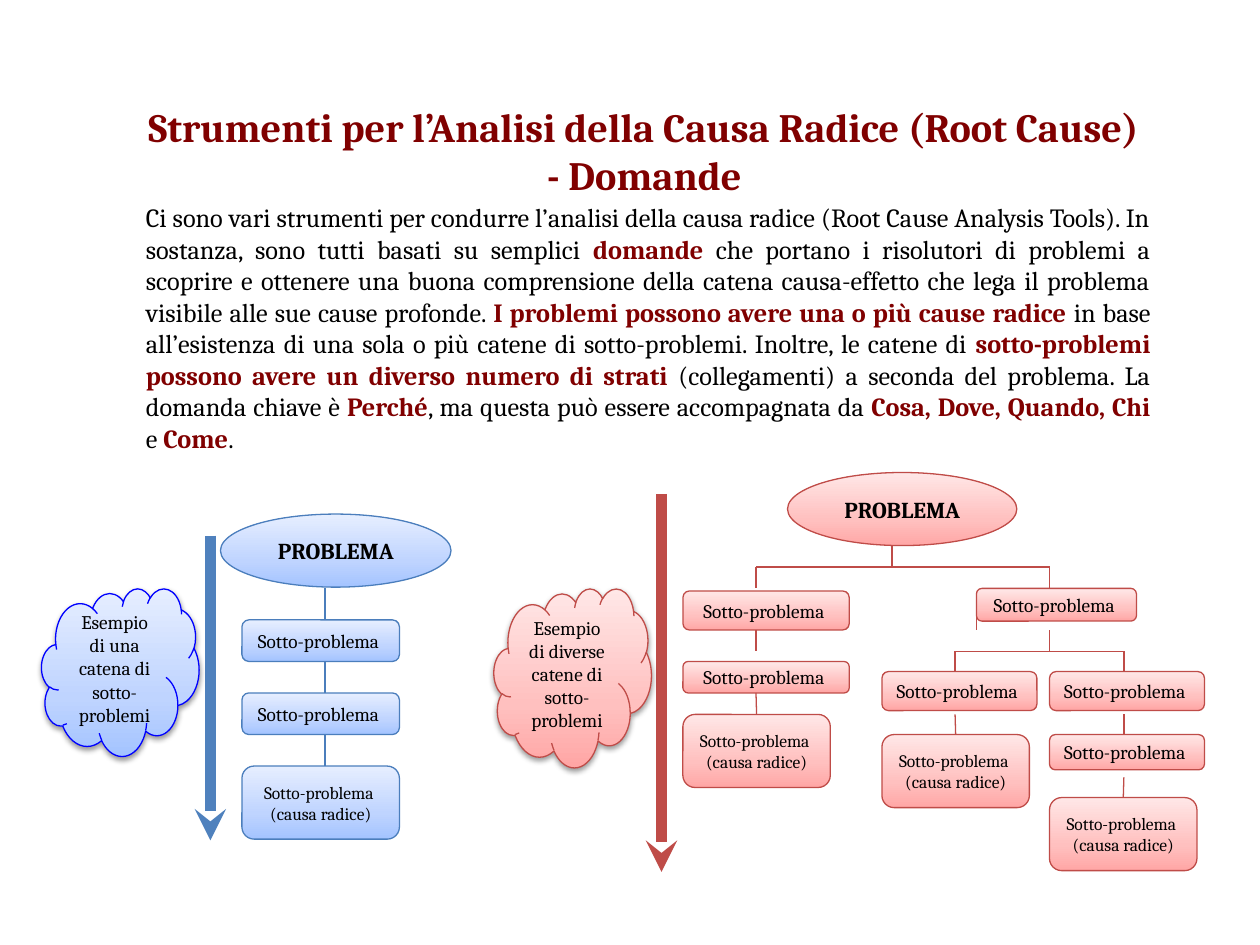
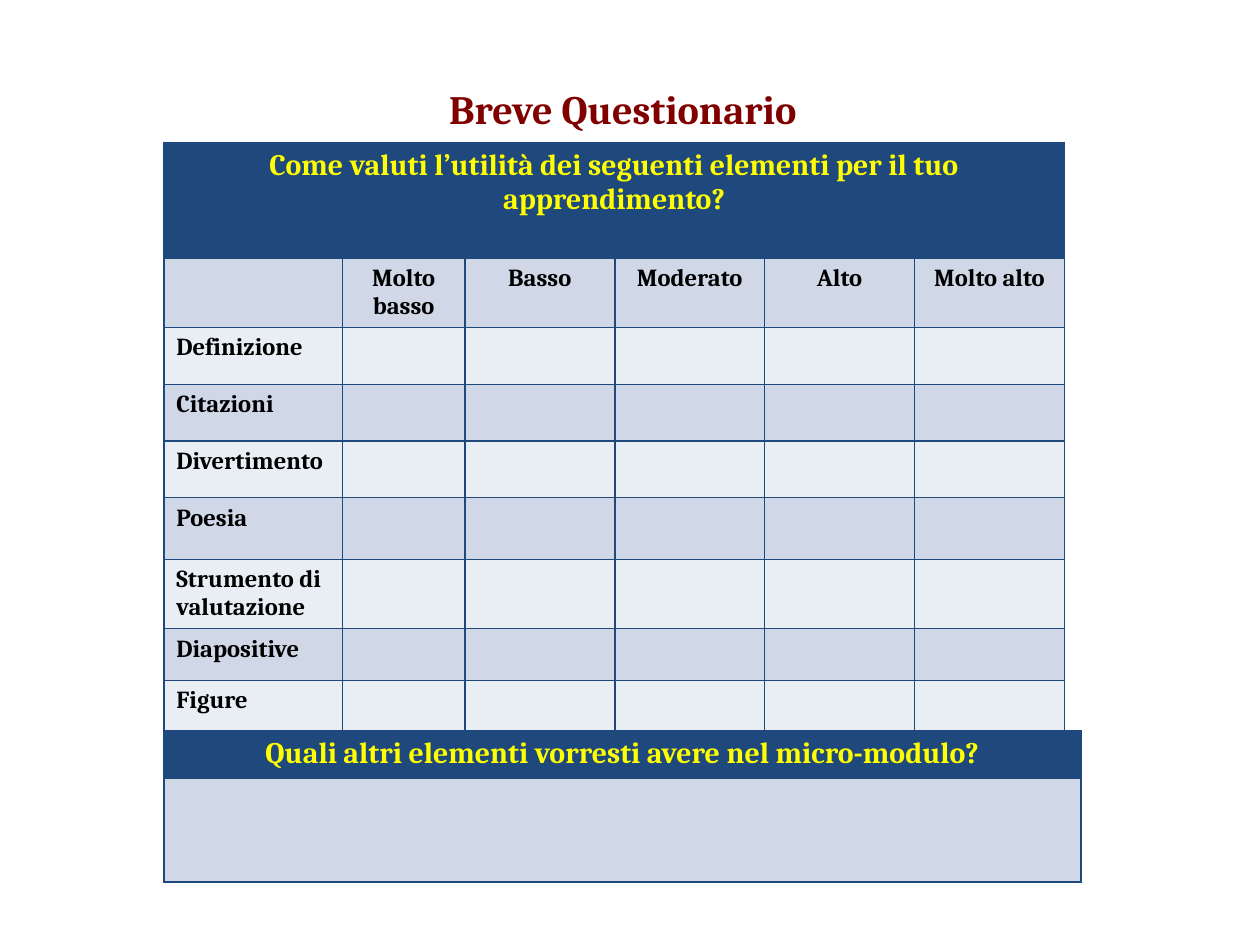
from lxml.etree import SubElement
from pptx import Presentation
from pptx.dml.color import RGBColor
from pptx.enum.shapes import MSO_CONNECTOR, MSO_SHAPE
from pptx.enum.text import MSO_ANCHOR, MSO_AUTO_SIZE, PP_ALIGN
from pptx.oxml.ns import qn
from pptx.util import Inches, Pt

FONT = "Cambria"
COLORS = {
    "text": "000000", "accent": "800000", "header": "1F497D",
    "header_text": "FFFF00", "band_dark": "D0D8E8", "band_light": "E9EDF4",
    "blue_line": "4B7EBC", "blue_arrow": "4F81BD", "blue_cloud": "0000FF",
    "red_line": "BF4C48",
}
GRADIENTS = {
    "blue": [(0, "A4C4FF"), (35, "BFD4FF"), (100, "E6EEFF")],
    "red": [(0, "FFA6A5"), (35, "FFC0BF"), (100, "FFE7E7")],
}

TOOLS_TITLE = "Strumenti per l’Analisi della Causa Radice (Root Cause) - Domande"
TOOLS_RUNS = [
    ("Ci sono vari strumenti per condurre l’analisi della causa radice (Root Cause Analysis Tools). "
     "In sostanza, sono tutti basati su semplici ", False),
    ("domande", True),
    (" che portano i risolutori di problemi a scoprire e ottenere una buona comprensione della catena "
     "causa-effetto che lega il problema visibile alle sue cause profonde. ", False),
    ("I problemi possono avere una o più cause radice ", True),
    ("in base all’esistenza di una sola o più catene di sotto-problemi. Inoltre, le catene di ", False),
    ("sotto-problemi possono avere un diverso numero di strati ", True),
    ("(collegamenti) a seconda del problema. La domanda chiave è ", False),
    ("Perché", True),
    (", ma questa può essere accompagnata da ", False),
    ("Cosa, Dove, Quando, Chi ", True),
    ("e ", False),
    ("Come", True),
    (".", False),
]
PROBLEM = ["PROBLEMA"]
SUB_PROBLEM = ["Sotto-problema "]
ROOT_CAUSE = ["Sotto-problema ", "(causa radice)"]

DIAGRAMS = [
    {
        "theme": "blue", "line": "blue_line",
        "arrow": ("blue_arrow", (1.67, 4.25, 1.67, 6.67)),
        "cloud": ("blue_cloud", "Esempio di una catena di sotto-problemi", (0.33, 4.67, 1.25, 1.33)),
        "problem": (1.75, 4.08, 1.83, 0.58),
        "sub_problems": [(1.92, 4.92, 1.25, 0.33), (1.92, 5.5, 1.25, 0.33)],
        "root_causes": [(1.92, 6.08, 1.25, 0.58)],
        "links": [(2.58, 4.67, 2.58, 4.92), (2.58, 5.25, 2.58, 5.5), (2.58, 5.83, 2.58, 6.08)],
    },
    {
        "theme": "red", "line": "red_line",
        "arrow": ("red_line", (5.25, 3.92, 5.25, 6.92)),
        "cloud": ("red_line", "Esempio di diverse catene di sotto-problemi", (3.92, 4.67, 1.25, 1.42)),
        "problem": (6.25, 3.75, 1.82, 0.58),
        "sub_problems": [
            (5.42, 4.69, 1.32, 0.31), (5.42, 5.25, 1.32, 0.25), (7.75, 4.67, 1.27, 0.26),
            (7, 5.33, 1.23, 0.31), (8.33, 5.33, 1.23, 0.31), (8.33, 5.83, 1.23, 0.28),
        ],
        "root_causes": [(5.42, 5.67, 1.17, 0.58), (7, 5.83, 1.17, 0.58), (8.33, 6.33, 1.17, 0.58)],
        "links": [
            (6, 4.5, 8.33, 4.5), (7.08, 4.33, 7.08, 4.5),
            (6, 4.5, 6, 4.67), (8.33, 4.5, 8.33, 4.67),
            (6, 5, 6, 5.17), (6, 5.5, 6, 5.67), (8.33, 5, 8.33, 5.17),
            (7.58, 5.17, 8.92, 5.17), (7.58, 5.17, 7.58, 5.33), (7.58, 5.67, 7.58, 5.83),
            (8.92, 5.17, 8.92, 5.33), (8.92, 5.67, 8.92, 5.83), (8.92, 6.17, 8.92, 6.33),
            (7.75, 4.83, 7.75, 5),
        ],
    },
]

SURVEY_TITLE = "Breve Questionario"
RATING_QUESTION = "Come valuti l’utilità dei seguenti elementi per il tuo apprendimento?"
RATINGS = ["Molto basso", "Basso", "Moderato", "Alto", "Molto alto"]
ELEMENTS = ["Definizione", "Citazioni", "Divertimento", "Poesia",
            "Strumento di valutazione", "Diapositive", "Figure"]
RATING_COLUMNS = [1.42, 0.97] + [1.19] * 4
RATING_ROWS = [0.92, 0.55, 0.45, 0.45, 0.45, 0.49, 0.55, 0.41, 0.41]
OPEN_QUESTION = "Quali altri elementi vorresti avere nel micro-modulo?"


def color(name):
    return RGBColor.from_string(COLORS[name])


def add_run(paragraph, text, size, color_name="text", bold=False):
    run = paragraph.add_run()
    run.text = text
    run.font.name = FONT
    run.font.size = Pt(size)
    run.font.bold = bold
    run.font.color.rgb = color(color_name)


def add_titled_slide(presentation, text, box):
    slide = presentation.slides.add_slide(presentation.slide_layouts[5])
    title = slide.shapes.title
    title.left, title.top, title.width, title.height = map(Inches, box)
    frame = title.text_frame
    frame.auto_size = MSO_AUTO_SIZE.NONE
    frame.vertical_anchor = MSO_ANCHOR.TOP
    paragraph = frame.paragraphs[0]
    paragraph.alignment = PP_ALIGN.CENTER
    add_run(paragraph, text, 23, "accent", True)
    return slide


def fill_gradient(shape, theme):
    shape.fill.gradient()
    shape.fill.gradient_angle = 90
    stops = shape.element.spPr.find(".//" + qn("a:gsLst"))
    for stop in list(stops):
        stops.remove(stop)
    for position, value in GRADIENTS[theme]:
        stop = SubElement(stops, qn("a:gs"), pos=str(position * 1000))
        SubElement(stop, qn("a:srgbClr"), val=value)


def add_node(slide, kind, box, theme, line, lines, size, bold=False):
    shape = slide.shapes.add_shape(kind, *map(Inches, box))
    shape.shadow.inherit = False
    fill_gradient(shape, theme)
    shape.line.color.rgb = color(line)
    shape.line.width = Pt(0.75)
    frame = shape.text_frame
    frame.word_wrap = True
    frame.vertical_anchor = MSO_ANCHOR.MIDDLE
    for index, text in enumerate(lines):
        paragraph = frame.add_paragraph() if index else frame.paragraphs[0]
        paragraph.alignment = PP_ALIGN.CENTER
        add_run(paragraph, text, size, bold=bold)
    return shape


def add_soft_shadow(shape):
    effects = shape.element.spPr.find(qn("a:effectLst"))
    shadow = SubElement(effects, qn("a:outerShdw"), blurRad=str(Pt(3.1)), dist=str(Pt(1.6)),
                        dir="5400000", rotWithShape="0")
    black = SubElement(shadow, qn("a:srgbClr"), val=COLORS["text"])
    SubElement(black, qn("a:alpha"), val="38000")


def add_line(slide, ends, line, width=0.75):
    connector = slide.shapes.add_connector(MSO_CONNECTOR.STRAIGHT, *map(Inches, ends))
    connector.line.color.rgb = color(line)
    connector.line.width = Pt(width)
    SubElement(connector.element.spPr, qn("a:effectLst"))
    return connector


def join_to_top(connector, ends, boxes):
    for box, shape in boxes:
        left, top, width, _ = box
        if abs(left + width / 2 - ends[2]) < 0.02 and abs(top - ends[3]) < 0.02:
            connector.end_connect(shape, 0)


def add_diagram(slide, diagram):
    theme, line = diagram["theme"], diagram["line"]
    add_node(slide, MSO_SHAPE.OVAL, diagram["problem"], theme, line, PROBLEM, 13, True)
    boxes = []
    for key, lines, size in [("sub_problems", SUB_PROBLEM, 11), ("root_causes", ROOT_CAUSE, 10)]:
        for box in diagram[key]:
            shape = add_node(slide, MSO_SHAPE.ROUNDED_RECTANGLE, box, theme, line, lines, size)
            boxes.append((box, shape))
    for ends in diagram["links"]:
        join_to_top(add_line(slide, ends, line), ends, boxes)
    arrow_color, ends = diagram["arrow"]
    arrow = add_line(slide, ends, arrow_color, 6)
    SubElement(arrow.line._get_or_add_ln(), qn("a:tailEnd"), type="stealth")
    cloud_line, text, box = diagram["cloud"]
    add_soft_shadow(add_node(slide, MSO_SHAPE.CLOUD, box, theme, cloud_line, [text], 11))


def add_tools_slide(presentation):
    slide = add_titled_slide(presentation, TOOLS_TITLE, (1.06, 0.76, 8.11, 0.88))
    body = slide.shapes.add_textbox(*map(Inches, (1.06, 1.55, 8.17, 1.87)))
    body.text_frame.word_wrap = True
    paragraph = body.text_frame.paragraphs[0]
    paragraph.alignment = PP_ALIGN.JUSTIFY
    for text, key in TOOLS_RUNS:
        add_run(paragraph, text, 15, "accent" if key else "text", key)
    for diagram in DIAGRAMS:
        add_diagram(slide, diagram)


def add_grid(slide, left, top, columns, rows):
    box = (left, top, sum(columns), sum(rows))
    table = slide.shapes.add_table(len(rows), len(columns), *map(Inches, box)).table
    for column, width in zip(table.columns, columns):
        column.width = Inches(width)
    for index, (row, height) in enumerate(zip(table.rows, rows)):
        row.height = Inches(height)
        fill = "header" if index == 0 else "band_dark" if index % 2 else "band_light"
        for cell in row.cells:
            properties = cell._tc.get_or_add_tcPr()
            for side in ("lnL", "lnR", "lnT", "lnB"):
                border = SubElement(properties, qn("a:" + side), w=str(Pt(1)))
                solid = SubElement(border, qn("a:solidFill"))
                SubElement(solid, qn("a:srgbClr"), val=COLORS["header"])
            cell.fill.solid()
            cell.fill.fore_color.rgb = color(fill)
    return table


def write_cell(cell, text, size=14, color_name="text", alignment=PP_ALIGN.CENTER):
    paragraph = cell.text_frame.paragraphs[0]
    paragraph.alignment = alignment
    add_run(paragraph, text, size, color_name, True)


def add_survey_slide(presentation):
    slide = add_titled_slide(presentation, SURVEY_TITLE, (2.32, 0.62, 5.25, 0.5))
    ratings = add_grid(slide, 1.3, 1.13, RATING_COLUMNS, RATING_ROWS)
    ratings.cell(0, 0).merge(ratings.cell(0, len(RATINGS)))
    write_cell(ratings.cell(0, 0), RATING_QUESTION, 17, "header_text")
    for column, rating in enumerate(RATINGS, 1):
        write_cell(ratings.cell(1, column), rating)
    for row, element in enumerate(ELEMENTS, 2):
        write_cell(ratings.cell(row, 0), element, alignment=PP_ALIGN.LEFT)
    suggestions = add_grid(slide, 1.3, 5.8, [7.28], [0.38, 0.82])
    write_cell(suggestions.cell(0, 0), OPEN_QUESTION, 17, "header_text")


def main():
    presentation = Presentation()
    presentation.slide_width, presentation.slide_height = Inches(10), Inches(7.5)
    add_tools_slide(presentation)
    add_survey_slide(presentation)
    presentation.save("out.pptx")


if __name__ == "__main__":
    main()
